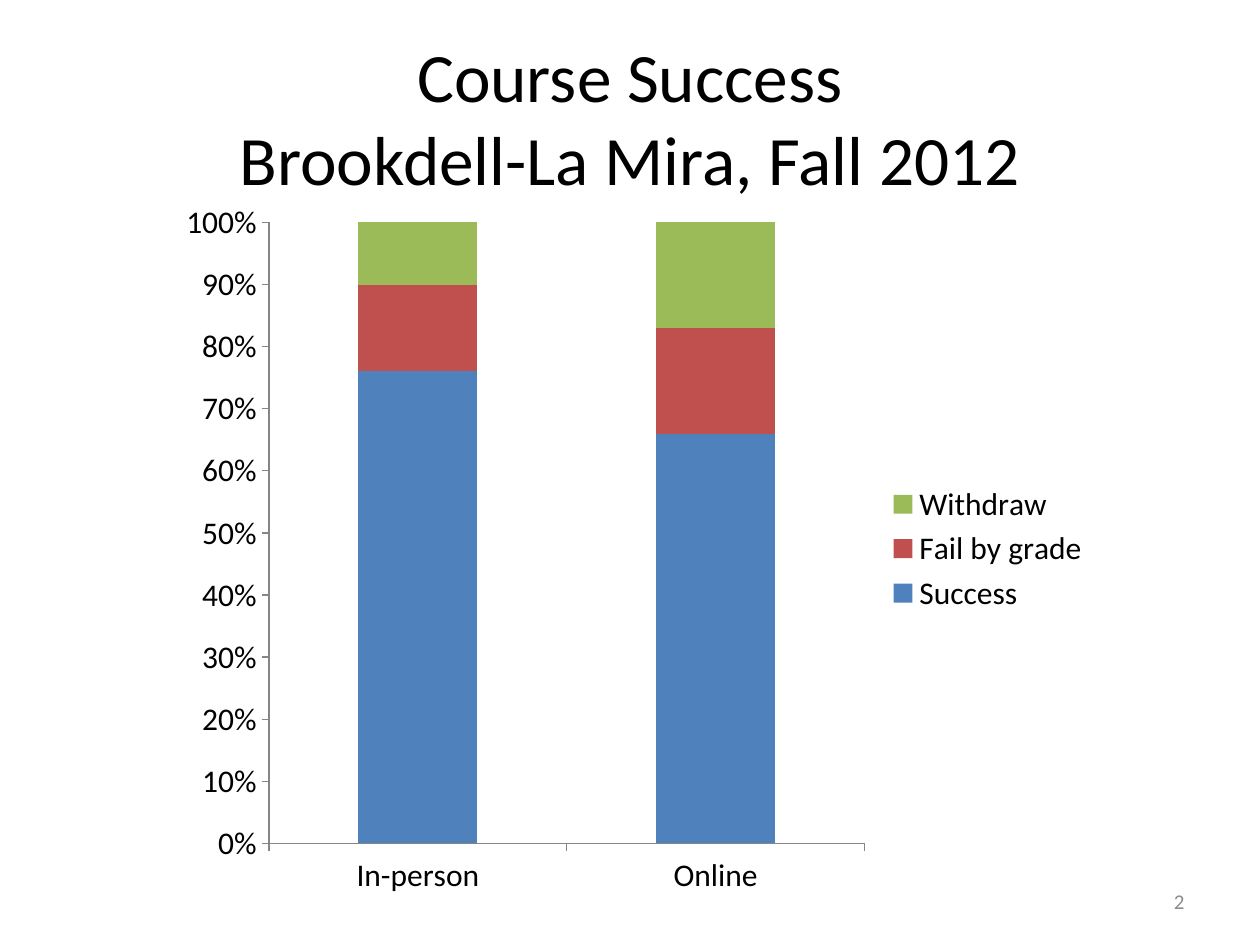
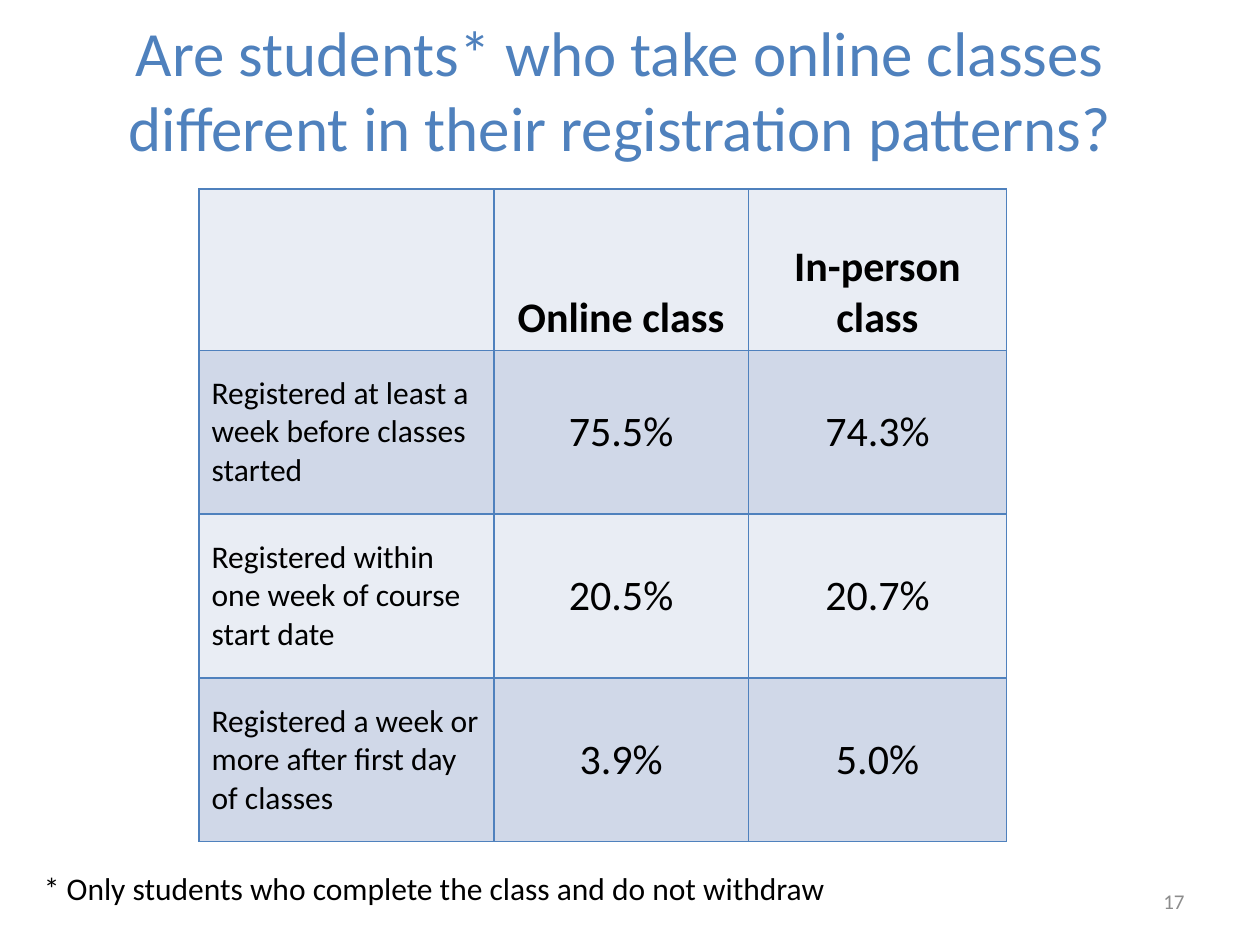
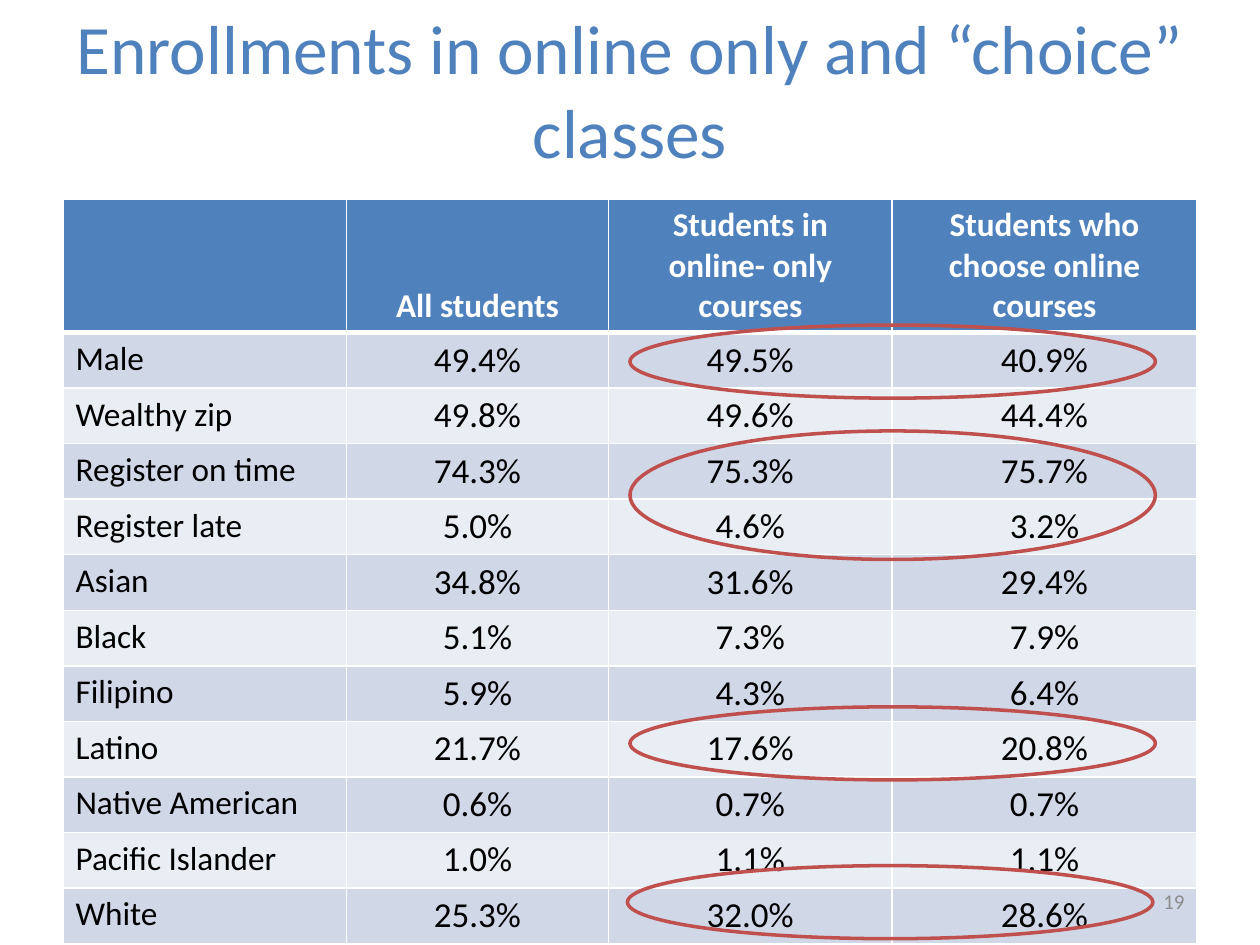
from lxml import etree
from pptx import Presentation
from pptx import util as u
from pptx.chart.data import CategoryChartData
from pptx.dml.color import RGBColor
from pptx.enum import chart as charts, shapes, text
from pptx.oxml.ns import qn

FONT = "Calibri"
COLOURS = {
    "black": "000000",
    "white": "FFFFFF",
    "blue": "4F81BD",
    "red": "C0504D",
    "green": "9BBB59",
    "grey": "8C8C8C",
    "axis": "868686",
    "dark band": "D0D8E8",
    "light band": "E9EDF4",
}
LEFT, CENTER, RIGHT = text.PP_ALIGN.LEFT, text.PP_ALIGN.CENTER, text.PP_ALIGN.RIGHT
TOP, MIDDLE, BOTTOM = text.MSO_ANCHOR.TOP, text.MSO_ANCHOR.MIDDLE, text.MSO_ANCHOR.BOTTOM


def colour(name):
    """Return the named colour."""
    return RGBColor.from_string(COLOURS[name])


def inches(*lengths):
    """Turn numbers into lengths in inches."""
    return [u.Inches(length) for length in lengths]


class Deck:
    """Hold the style and the current slide."""

    def __init__(self):
        """Start an empty 10 by 7.5 inch deck."""
        self.show = Presentation()
        self.show.slide_width, self.show.slide_height = inches(10, 7.5)

    def page(self, lines, size, shade, left=0.5, top=0.08):
        """Add a slide with a centred title."""
        self.slide = self.show.slides.add_slide(self.show.slide_layouts[5])
        title = self.slide.shapes.title
        title.left, title.top, title.width, title.height = inches(left, top, 9, 1.25)
        frame = title.text_frame
        frame.word_wrap = True
        frame.auto_size = text.MSO_AUTO_SIZE.NONE
        frame.vertical_anchor = MIDDLE
        para = frame.paragraphs[0]
        for index, line in enumerate(lines):
            if index:
                para.add_line_break()
            self.span(para, line, size, shade, CENTER)

    def style(self, font, size, shade, bold=False):
        """Format a font in the deck's typeface."""
        font.name, font.size, font.bold = FONT, u.Pt(size), bold
        font.color.rgb = colour(shade)

    def span(self, para, words, size, shade, align=LEFT, bold=False):
        """Add a formatted run to a paragraph."""
        para.alignment = align
        span = para.add_run()
        span.text = words
        self.style(span.font, size, shade, bold)

    def label(self, words, at, size, shade="black", align=LEFT, anchor=TOP):
        """Add a text box."""
        box = self.slide.shapes.add_textbox(*inches(*at))
        box.text_frame.word_wrap = True
        box.text_frame.vertical_anchor = anchor
        self.span(box.text_frame.paragraphs[0], words, size, shade, align)

    def number(self, value):
        """Add the page number."""
        self.label(str(value), (7.17, 6.95, 2.33, 0.4), 12, "grey", RIGHT, MIDDLE)

    def ring(self, left, top, height=0.58):
        """Add a red outline ellipse around table values."""
        ring = self.slide.shapes.add_shape(
            shapes.MSO_SHAPE.OVAL, *inches(left, top, 4.17, height))
        ring.shadow.inherit = False
        ring.fill.background()
        ring.line.color.rgb = colour("red")
        ring.line.width = u.Pt(2)

    def borders(self, cell, shade, bottom=1):
        """Draw the four borders of a cell."""
        properties = cell._tc.get_or_add_tcPr()
        widths = {"a:lnL": 1, "a:lnR": 1, "a:lnT": 1, "a:lnB": bottom}
        for index, (tag, width) in enumerate(widths.items()):
            line = etree.Element(qn(tag), w=str(u.Pt(width)))
            fill = etree.SubElement(line, qn("a:solidFill"))
            etree.SubElement(fill, qn("a:srgbClr"), val=COLOURS[shade])
            properties.insert(index, line)

    def table(self, at, widths, heights, rows, header, border, sizes, anchor, rule=1):
        """Add a banded table whose header has its own fill and text colours."""
        head_size, label_size, value_size = sizes
        grid = self.slide.shapes.add_table(
            len(rows), len(widths), *inches(*at, sum(widths), sum(heights))).table
        for column, width in zip(grid.columns, widths):
            column.width = u.Inches(width)
        for r, (row, height) in enumerate(zip(rows, heights)):
            grid.rows[r].height = u.Inches(height)
            band, shade = ("dark band" if r % 2 else "light band", "black") if r else header
            for c, words in enumerate(row):
                cell = grid.cell(r, c)
                cell.fill.solid()
                cell.fill.fore_color.rgb = colour(band)
                cell.vertical_anchor = anchor if r else BOTTOM
                self.borders(cell, border, 1 if r else rule)
                if words:
                    size = (value_size if c else label_size) if r else head_size
                    self.span(cell.text_frame.paragraphs[0], words, size, shade,
                              CENTER if c else LEFT, not r)

    def stacked_chart(self, at, categories, series):
        """Add a 100% stacked column chart with a legend on the right."""
        data = CategoryChartData()
        data.categories = categories
        for name, values, _ in series:
            data.add_series(name, values)
        chart = self.slide.shapes.add_chart(
            charts.XL_CHART_TYPE.COLUMN_STACKED_100, *inches(*at), data).chart
        self.style(chart.font, 18, "black")
        chart.has_title = False
        chart.has_legend = True
        chart.legend.position = charts.XL_LEGEND_POSITION.RIGHT
        chart.legend.include_in_layout = False
        plot = chart.plots[0]
        plot.gap_width, plot.overlap, plot.vary_by_categories = 150, 100, False
        for bars, (_, _, shade) in zip(plot.series, series):
            bars.format.fill.solid()
            bars.format.fill.fore_color.rgb = colour(shade)
        for axis in (chart.category_axis, chart.value_axis):
            axis.has_major_gridlines = False
            axis.major_tick_mark = charts.XL_TICK_MARK.OUTSIDE
            axis.format.line.color.rgb = colour("axis")
        labels = chart.value_axis.tick_labels
        labels.number_format, labels.number_format_is_linked = "0%", False


def main():
    """Build the three slides."""
    deck = Deck()

    deck.page(["Course Success", "Brookdell-La Mira, Fall 2012"], 39.6, "black", top=0.3)
    deck.stacked_chart((1.33, 1.5, 7.42, 5.71), ["In-person", "Online"], [
        ("Success", (76, 66), "blue"),
        ("Fail by grade", (14, 17), "red"),
        ("Withdraw", (10, 17), "green"),
    ])
    deck.number(2)

    deck.page(["Are students* who take online classes different in their "
               "registration patterns?"], 36, "blue", left=0.42)
    registration = [
        ("", "Online class", "In-person class"),
        ("Registered at least a week before classes started", "75.5%", "74.3%"),
        ("Registered within one week of course start date", "20.5%", "20.7%"),
        ("Registered a week or more after first day of classes", "3.9%", "5.0%"),
    ]
    deck.table((1.58, 1.5), (2.34, 2.02, 2.05), [1.28] + [1.3] * 3, registration,
               ("light band", "black"), "blue", (24, 18, 24), MIDDLE)
    deck.number(17)
    deck.label("* Only students who complete the class and do not withdraw",
               (0.25, 6.85, 8.42, 0.4), 18)

    deck.page(["Enrollments in online only and “choice” classes"], 39.6, "blue")
    enrollments = [
        ("", "All students", "Students in online- only courses",
         "Students who choose online courses"),
        ("Male", "49.4%", "49.5%", "40.9%"),
        ("Wealthy zip", "49.8%", "49.6%", "44.4%"),
        ("Register on time", "74.3%", "75.3%", "75.7%"),
        ("Register late", "5.0%", "4.6%", "3.2%"),
        ("Asian", "34.8%", "31.6%", "29.4%"),
        ("Black", "5.1%", "7.3%", "7.9%"),
        ("Filipino", "5.9%", "4.3%", "6.4%"),
        ("Latino", "21.7%", "17.6%", "20.8%"),
        ("Native American", "0.6%", "0.7%", "0.7%"),
        ("Pacific Islander", "1.0%", "1.1%", "1.1%"),
        ("White", "25.3%", "32.0%", "28.6%"),
    ]
    deck.table((0.5, 1.58), (2.25, 2.08, 2.25, 2.42), [1.05] + [0.44] * 11, enrollments,
               ("blue", "white"), "white", (19, 19, 20), TOP, rule=3)
    deck.number(19)
    deck.ring(5, 2.58)
    deck.ring(4.98, 6.87)
    deck.ring(5, 5.61)
    deck.ring(5, 3.42, 1.02)

    deck.show.save("out.pptx")


if __name__ == "__main__":
    main()
